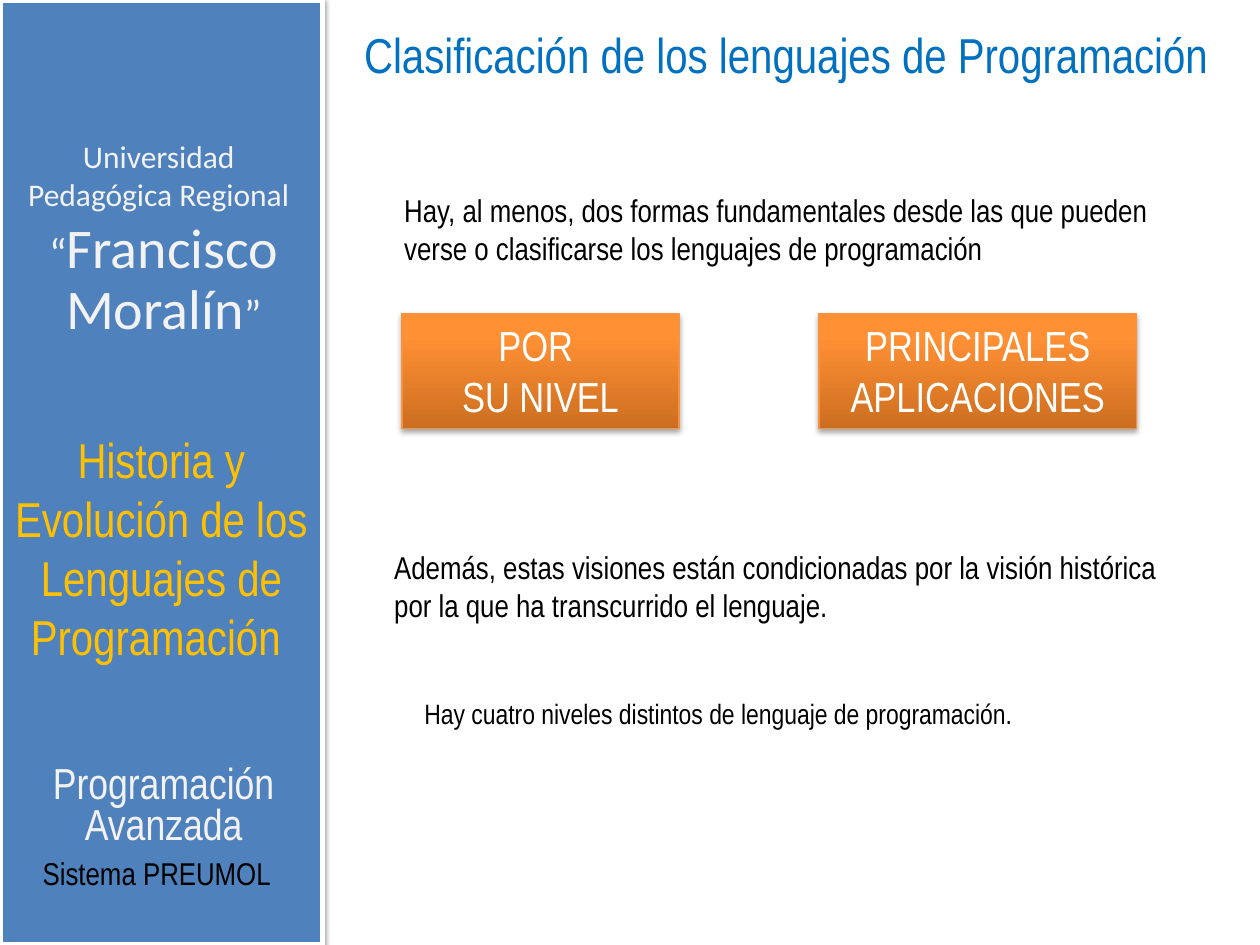
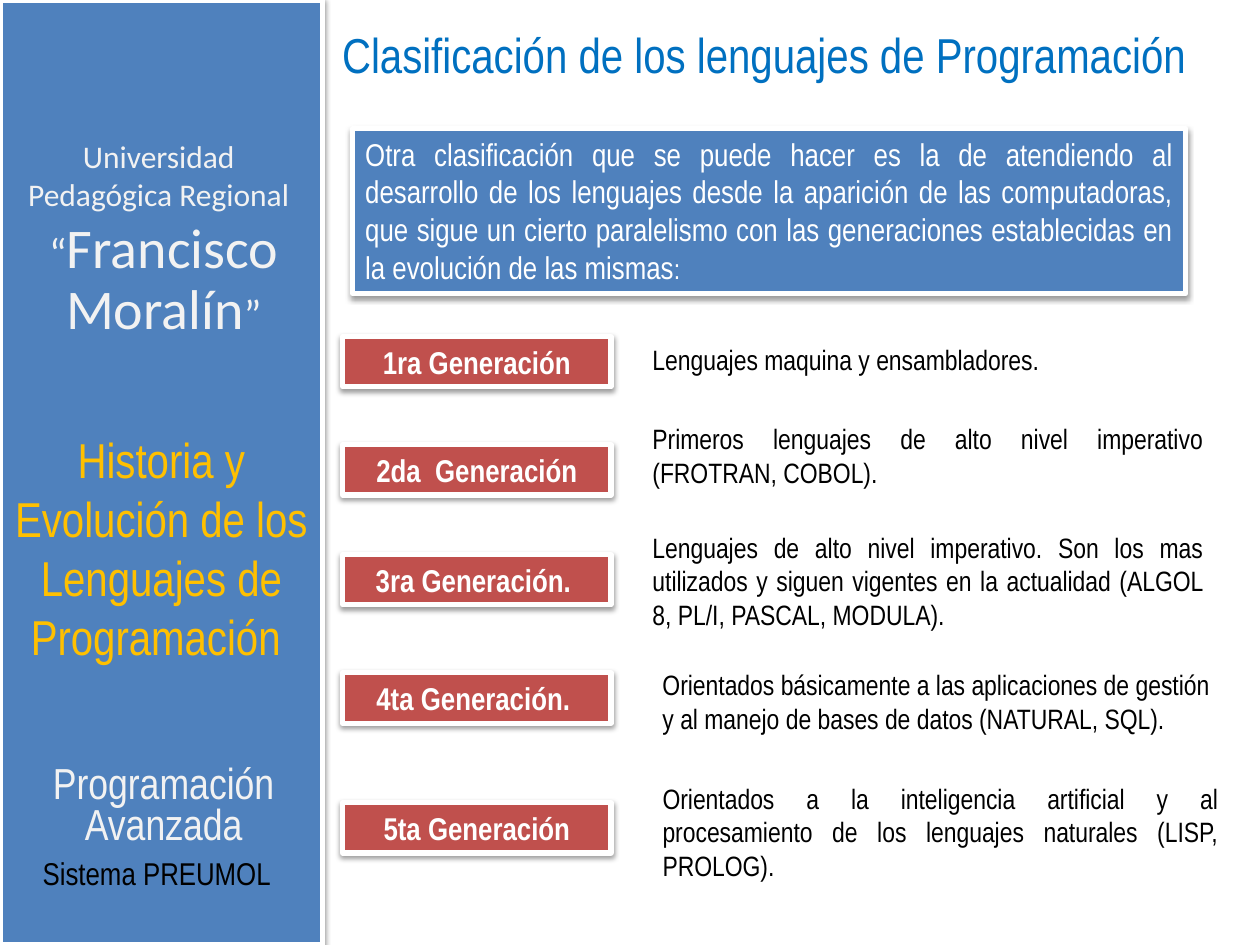
from dataclasses import dataclass

from lxml import etree
from pptx import Presentation
from pptx import util as u
from pptx.dml.color import RGBColor
from pptx.enum import shapes, text
from pptx.oxml.ns import qn

SLIDE_WIDTH, SLIDE_HEIGHT = u.Inches(10), u.Inches(7.5)
TITLE_ONLY = 5

# Shared palette and fonts
BLUE, RED, ORANGE = "4F81BD", "C0504D", "F69240"
WHITE, PALE, BLACK = "FFFFFF", "F2F2F2", "000000"
GOLD, TITLE_BLUE = "FFC000", "0070C0"
ORANGE_STOPS = ((0, "CC6E20"), (80, "FF9034"), (100, "FF9136"))
NARROW, ROUND = "Arial Narrow", "Calibri"

LEFT, CENTER, JUSTIFY = text.PP_ALIGN.LEFT, text.PP_ALIGN.CENTER, text.PP_ALIGN.JUSTIFY
TOP, MIDDLE, BOTTOM = text.MSO_ANCHOR.TOP, text.MSO_ANCHOR.MIDDLE, text.MSO_ANCHOR.BOTTOM


@dataclass(frozen=True)
class Box:
    """Percent shares of the slide's width and height."""
    left: float
    top: float
    width: float
    height: float

    def place(self) -> tuple:
        across, down = SLIDE_WIDTH / 100, SLIDE_HEIGHT / 100
        return (u.Emu(round(self.left * across)), u.Emu(round(self.top * down)),
                u.Emu(round(self.width * across)), u.Emu(round(self.height * down)))


@dataclass(frozen=True)
class Span:
    words: str
    size: float = 18
    color: str = BLACK
    font: str = NARROW
    bold: bool = False


@dataclass(frozen=True)
class Words:
    """Paragraphs of spans with one common layout."""
    paras: tuple
    align: int = LEFT
    anchor: int = TOP
    spacing: float = 1.0
    before: float = 0


@dataclass(frozen=True)
class Generation:
    label: str
    label_top: float
    description: str
    box: Box
    align: int = JUSTIFY


def one(words: str, size: float = 18, color: str = BLACK, font: str = NARROW,
        bold: bool = False, **layout) -> Words:
    return Words(((Span(words, size, color, font, bold),),), **layout)


TITLE = one("Clasificación de los lenguajes de Programación ", 28, TITLE_BLUE,
            align=CENTER, anchor=BOTTOM)

# Side panel, the same on every page
PANEL = Box(0, 0, 25.6, 100)
PANEL_TEXTS = (
    (Box(0, 6.93, 25.2, 23.07),
     one("Universidad Pedagógica Regional", 18, PALE, ROUND, align=CENTER, anchor=MIDDLE)),
    (Box(2, 80.4, 22, 10.53),
     one("Programación Avanzada", 24.8, PALE, align=CENTER, spacing=0.8, before=5)),
    (Box(0, 26.93, 26, 9.87),
     Words(((Span("“", 24, PALE, ROUND), Span("Francisco Moralín", 32, PALE, ROUND),
             Span("”", 24, PALE, ROUND)),), CENTER, BOTTOM, 0.9)),
    (Box(2.4, 90.93, 25.2, 4.13), one("Sistema PREUMOL", anchor=BOTTOM)),
    (Box(0, 44.8, 25.6, 26.27),
     one("Historia y Evolución de los Lenguajes de Programación ", 28, GOLD,
         align=CENTER, anchor=BOTTOM)),
)

# First page
VIEW_TEXTS = (
    (Box(32.7, 73.07, 57.5, 4.93),
     one("Hay cuatro niveles distintos de lenguaje de programación.", 16)),
    (Box(31.1, 19.6, 63, 9.47),
     one("Hay, al menos, dos formas fundamentales desde las que pueden verse o "
         "clasificarse los lenguajes de programación")),
    (Box(30.3, 57.33, 63.8, 9.47),
     one("Además, estas visiones están condicionadas por la visión histórica por la "
         "que ha transcurrido el lenguaje.")),
)
VIEWS = (
    (Box(31.9, 33.2, 22, 12.13), ("POR ", "SU NIVEL")),
    (Box(65, 33.2, 25.2, 12.13), ("PRINCIPALES APLICACIONES",)),
)

# Second page
INTRO_BOX = Box(28, 13.6, 66.1, 17.47)
INTRO = Words(((
    Span("Otra clasificación que se puede hacer es la de atendiendo al desarrollo de los "
         "lenguajes desde la aparición de las computadoras, que sigue un cierto paralelismo "
         "con las generaciones establecidas en la evolución de las mismas", 18, WHITE),
    Span(":", 16, WHITE)),), JUSTIFY)
GENERATIONS = (
    Generation("1ra Generación", 35.6, "Lenguajes maquina y ensambladores.",
               Box(50.8, 35.6, 45.7, 4.93), LEFT),
    Generation("2da  Generación", 47.07,
               "Primeros lenguajes de alto nivel imperativo (FROTRAN, COBOL).",
               Box(50.8, 44, 45.7, 8.53)),
    Generation("3ra Generación. ", 58.67,
               "Lenguajes de alto nivel imperativo. Son los mas utilizados y siguen vigentes "
               "en la actualidad (ALGOL 8, PL/I, PASCAL, MODULA).",
               Box(50.8, 55.47, 45.7, 12.13)),
    Generation("4ta Generación. ", 71.2,
               "Orientados básicamente a las aplicaciones de gestión y al manejo de bases "
               "de datos (NATURAL, SQL).", Box(51.6, 70, 45.7, 8.53), LEFT),
    Generation("5ta Generación", 84.93,
               "Orientados a la inteligencia artificial y al procesamiento de los lenguajes "
               "naturales (LISP, PROLOG).", Box(51.6, 82, 46.1, 12.13)),
)


def rgb(color: str) -> RGBColor:
    return RGBColor.from_string(color)


def write(shape, words: Words) -> None:
    frame = shape.text_frame
    frame.word_wrap = True
    frame.auto_size = text.MSO_AUTO_SIZE.NONE
    frame.vertical_anchor = words.anchor
    for index, spans in enumerate(words.paras):
        para = frame.add_paragraph() if index else frame.paragraphs[0]
        para.alignment = words.align
        para.line_spacing = words.spacing
        para.space_before = u.Pt(words.before)
        for span in spans:
            run = para.add_run()
            run.text = span.words
            run.font.size = u.Pt(span.size)
            run.font.name = span.font
            run.font.bold = span.bold
            run.font.color.rgb = rgb(span.color)


def add_text(page, box: Box, words: Words) -> None:
    write(page.shapes.add_textbox(*box.place()), words)


def add_shadow(shape, alpha: int, distance: float) -> None:
    shape.shadow.inherit = False
    effects = shape.element.spPr.find(qn("a:effectLst"))
    shadow = etree.SubElement(effects, qn("a:outerShdw"), blurRad=str(u.Pt(3.1)),
                              dist=str(u.Pt(distance)), dir="5400000", rotWithShape="0")
    color = etree.SubElement(shadow, qn("a:srgbClr"), val=BLACK)
    etree.SubElement(color, qn("a:alpha"), val=str(alpha * 1000))


def add_block(page, box: Box, fill: str, line: str = WHITE, line_width: float = 3,
              alpha: int = 38, distance: float = 1.6):
    block = page.shapes.add_shape(shapes.MSO_SHAPE.RECTANGLE, *box.place())
    block.fill.solid()
    block.fill.fore_color.rgb = rgb(fill)
    block.line.color.rgb = rgb(line)
    block.line.width = u.Pt(line_width)
    add_shadow(block, alpha, distance)
    return block


def add_orange_block(page, box: Box, lines: tuple) -> None:
    block = add_block(page, box, ORANGE, ORANGE, 0.75, 35, 1.8)
    block.fill.gradient()
    block.fill.gradient_angle = 90
    stops = block.element.spPr.find(qn("a:gradFill")).find(qn("a:gsLst"))
    for stop in list(stops):
        stops.remove(stop)
    for share, color in ORANGE_STOPS:
        stop = etree.SubElement(stops, qn("a:gs"), pos=str(share * 1000))
        etree.SubElement(stop, qn("a:srgbClr"), val=color)
    write(block, Words(tuple((Span(line, 24, WHITE),) for line in lines), CENTER))


def add_page(deck, title_width: float):
    """Page with the title and the side panel."""
    page = deck.slides.add_slide(deck.slide_layouts[TITLE_ONLY])
    title = page.shapes.title
    title.left, title.top, title.width, title.height = Box(
        PANEL.width, 0, title_width, 9.47).place()
    write(title, TITLE)
    add_block(page, PANEL, BLUE)
    for box, words in PANEL_TEXTS:
        add_text(page, box, words)
    return page


def build_views(deck) -> None:
    page = add_page(deck, 74.4)
    for box, words in VIEW_TEXTS:
        add_text(page, box, words)
    for box, lines in VIEWS:
        add_orange_block(page, box, lines)


def build_generations(deck) -> None:
    page = add_page(deck, 70.9)
    write(add_block(page, INTRO_BOX, BLUE), INTRO)
    for generation in GENERATIONS:
        label = add_block(page, Box(27.2, generation.label_top, 21.3, 5.33), RED)
        write(label, one(generation.label, 18, WHITE, bold=True, align=CENTER))
        add_text(page, generation.box,
                 one(generation.description, 16, align=generation.align))


def main() -> None:
    deck = Presentation()
    deck.slide_width, deck.slide_height = SLIDE_WIDTH, SLIDE_HEIGHT
    build_views(deck)
    build_generations(deck)
    deck.save("out.pptx")


if __name__ == "__main__":
    main()
